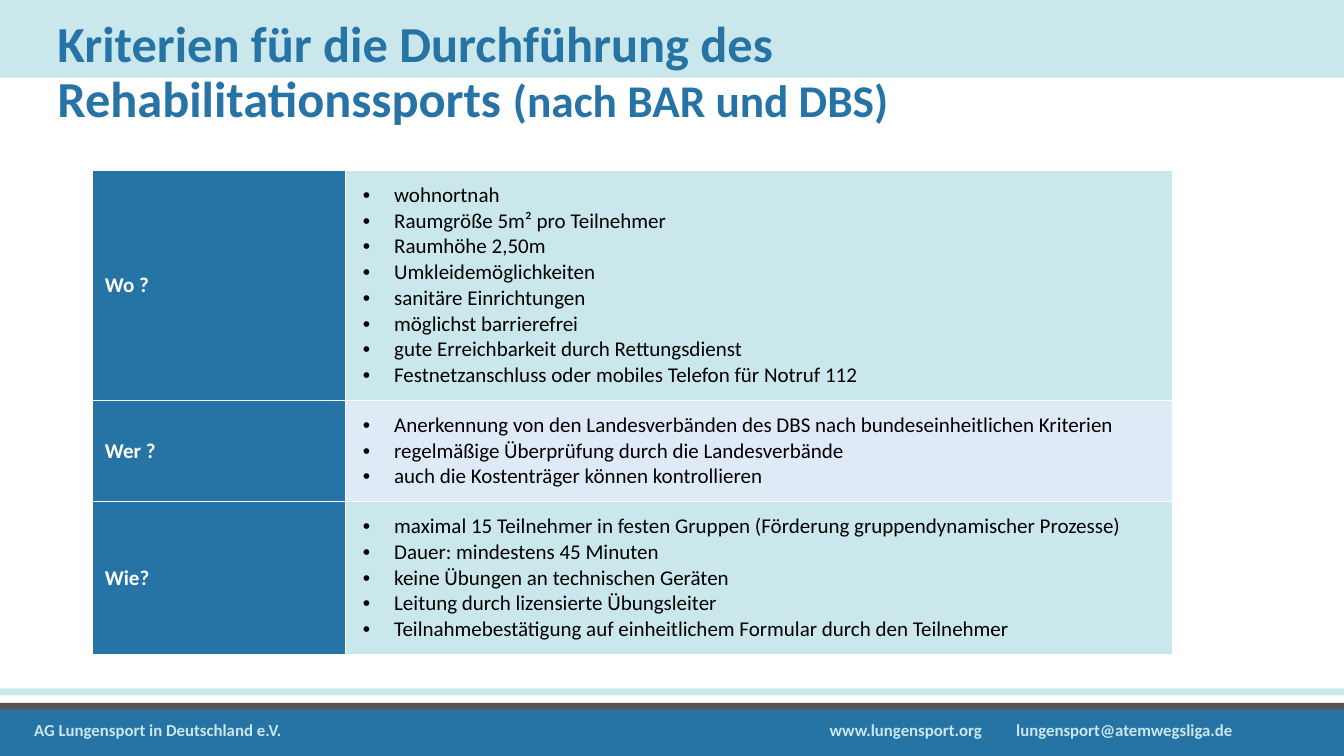
from pptx import Presentation
from pptx.dml.color import RGBColor
from pptx.enum.shapes import MSO_SHAPE
from pptx.enum.text import MSO_ANCHOR, MSO_AUTO_SIZE, PP_ALIGN
from pptx.oxml import parse_xml
from pptx.oxml.ns import nsdecls
from pptx.util import Inches, Pt

BLUE, PALE, LIGHT, GREY, WHITE, BLACK = "2673A5", "CAE7EC", "DEEBF7", "575656", "FFFFFF", "000000"
LINE_HEIGHT = 0.255
MARGIN = 0.12


def format_runs(paragraph, size, color, bold):
    for run in paragraph.runs:
        run.font.name = "Calibri"
        run.font.size = Pt(size)
        run.font.bold = bold
        run.font.color.rgb = RGBColor.from_string(color)


def add_xml(parent, xml):
    parent.append(parse_xml(xml.replace(">", f" {nsdecls('a')}>", 1)))


presentation = Presentation()
presentation.slide_width = Inches(13.33)
presentation.slide_height = Inches(7.5)
slide = presentation.slides.add_slide(presentation.slide_layouts[5])

bands = [(7.02, 0.48, BLUE), (6.97, 0.07, GREY), (6.9, 0.07, WHITE), (6.83, 0.07, PALE), (0, 0.77, PALE)]
for top, height, color in bands:
    band = slide.shapes.add_shape(MSO_SHAPE.RECTANGLE, 0, Inches(top), presentation.slide_width, Inches(height))
    band.shadow.inherit = False
    band.fill.solid()
    band.fill.fore_color.rgb = RGBColor.from_string(color)
    band.line.fill.background()

footer = slide.shapes.add_textbox(Inches(0.24), Inches(7.09), Inches(12.82), Inches(0.4))
footer.text_frame.word_wrap = True
footer.text_frame.text = "AG Lungensport in Deutschland e.V.\twww.lungensport.org\tlungensport@atemwegsliga.de"
paragraph = footer.text_frame.paragraphs[0]
stops = "".join(f'<a:tab pos="{Inches(position)}" algn="l"/>' for position in (7.89, 9.74))
add_xml(paragraph._p.get_or_add_pPr(), f"<a:tabLst>{stops}</a:tabLst>")
format_runs(paragraph, 12, PALE, True)

title = slide.shapes.title
slide.shapes.element.append(title.element)
title.left, title.top, title.width, title.height = Inches(0.47), Inches(0.25), Inches(11.36), Inches(0.96)
title.text_frame.text = "Kriterien für die Durchführung des Rehabilitationssports "
title.text_frame.auto_size = MSO_AUTO_SIZE.NONE
title.text_frame.word_wrap = True
title.text_frame.vertical_anchor = MSO_ANCHOR.MIDDLE
paragraph = title.text_frame.paragraphs[0]
paragraph.alignment = PP_ALIGN.LEFT
paragraph.line_spacing = 0.9
paragraph.add_run().text = "(nach BAR und DBS)"
format_runs(paragraph, 36, BLUE, True)
paragraph.runs[1].font.size = Pt(32.4)

criteria = [
    ("Wo ?", PALE, [
        "wohnortnah",
        "Raumgröße 5m² pro Teilnehmer",
        "Raumhöhe 2,50m",
        "Umkleidemöglichkeiten",
        "sanitäre Einrichtungen",
        "möglichst barrierefrei",
        "gute Erreichbarkeit durch Rettungsdienst",
        "Festnetzanschluss oder mobiles Telefon für Notruf 112",
    ]),
    ("Wer ?", LIGHT, [
        "Anerkennung von den Landesverbänden des DBS nach bundeseinheitlichen Kriterien",
        "regelmäßige Überprüfung durch die Landesverbände",
        "auch die Kostenträger können kontrollieren",
    ]),
    ("Wie?", PALE, [
        "maximal 15 Teilnehmer in festen Gruppen (Förderung gruppendynamischer Prozesse)",
        "Dauer: mindestens 45 Minuten",
        "keine Übungen an technischen Geräten",
        "Leitung durch lizensierte Übungsleiter",
        "Teilnahmebestätigung auf einheitlichem Formular durch den Teilnehmer",
    ]),
]
heights = [2 * MARGIN + LINE_HEIGHT * len(items) for _, _, items in criteria]
frame = slide.shapes.add_table(
    len(criteria), 2, Inches(0.92), Inches(1.69), Inches(10.71), Inches(sum(heights)))
table = frame.table
table.first_row = False
table.horz_banding = False
table.columns[0].width = Inches(2.51)
table.columns[1].width = Inches(8.2)

for row, (question, fill, items) in enumerate(criteria):
    table.rows[row].height = Inches(heights[row])
    label, answer = table.cell(row, 0), table.cell(row, 1)
    label.text_frame.text = question
    label.vertical_anchor = MSO_ANCHOR.MIDDLE
    format_runs(label.text_frame.paragraphs[0], 15, WHITE, True)

    answer.text_frame.text = "\n".join(items)
    for paragraph in answer.text_frame.paragraphs:
        properties = paragraph._p.get_or_add_pPr()
        properties.set("marL", str(Inches(0.36)))
        properties.set("indent", str(Inches(-0.31)))
        add_xml(properties, '<a:buFont typeface="Arial"></a:buFont>')
        add_xml(properties, '<a:buChar char="•"></a:buChar>')
        format_runs(paragraph, 15, BLACK, False)

    for cell, color in ((label, BLUE), (answer, fill)):
        cell.margin_left = cell.margin_right = cell.margin_top = cell.margin_bottom = Inches(MARGIN)
        for side in ("lnL", "lnR", "lnT", "lnB"):
            add_xml(cell._tc.get_or_add_tcPr(),
                    f'<a:{side} w="{Pt(1)}"><a:solidFill><a:srgbClr val="{WHITE}"/></a:solidFill></a:{side}>')
        cell.fill.solid()
        cell.fill.fore_color.rgb = RGBColor.from_string(color)

presentation.save("out.pptx")
